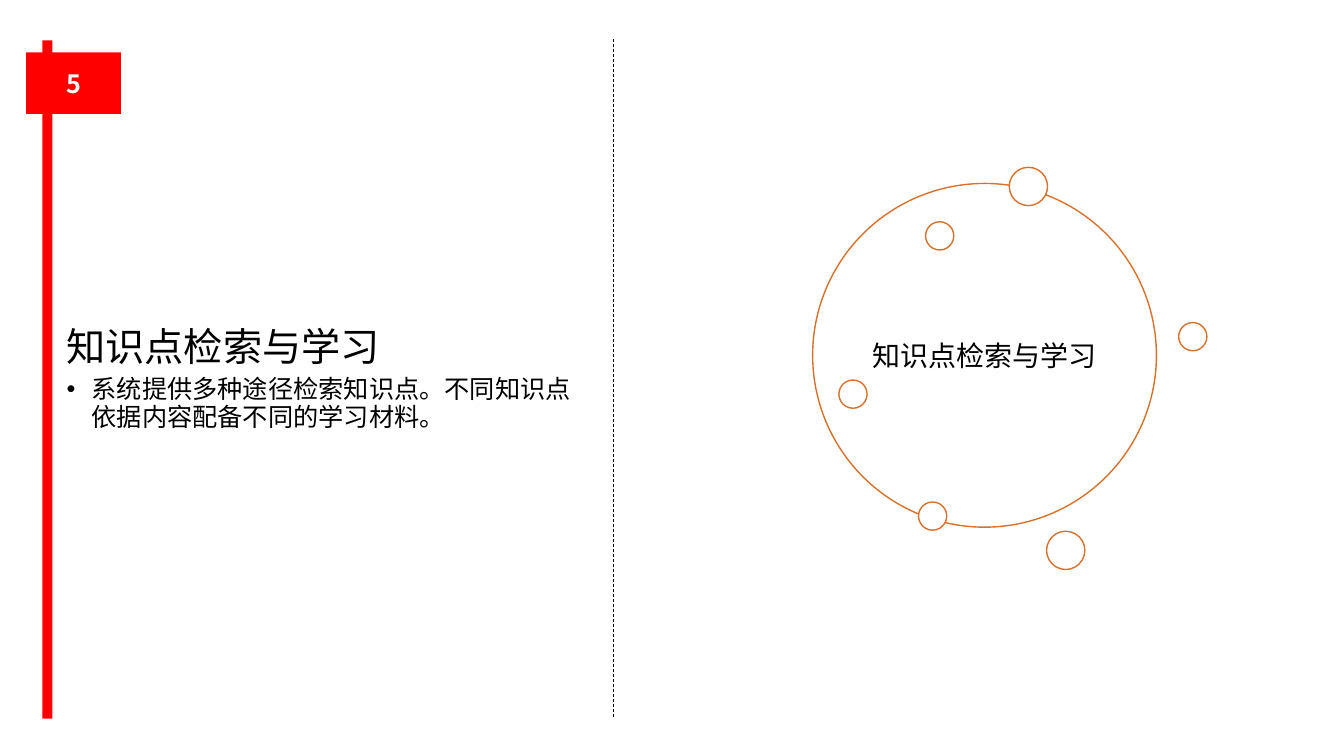
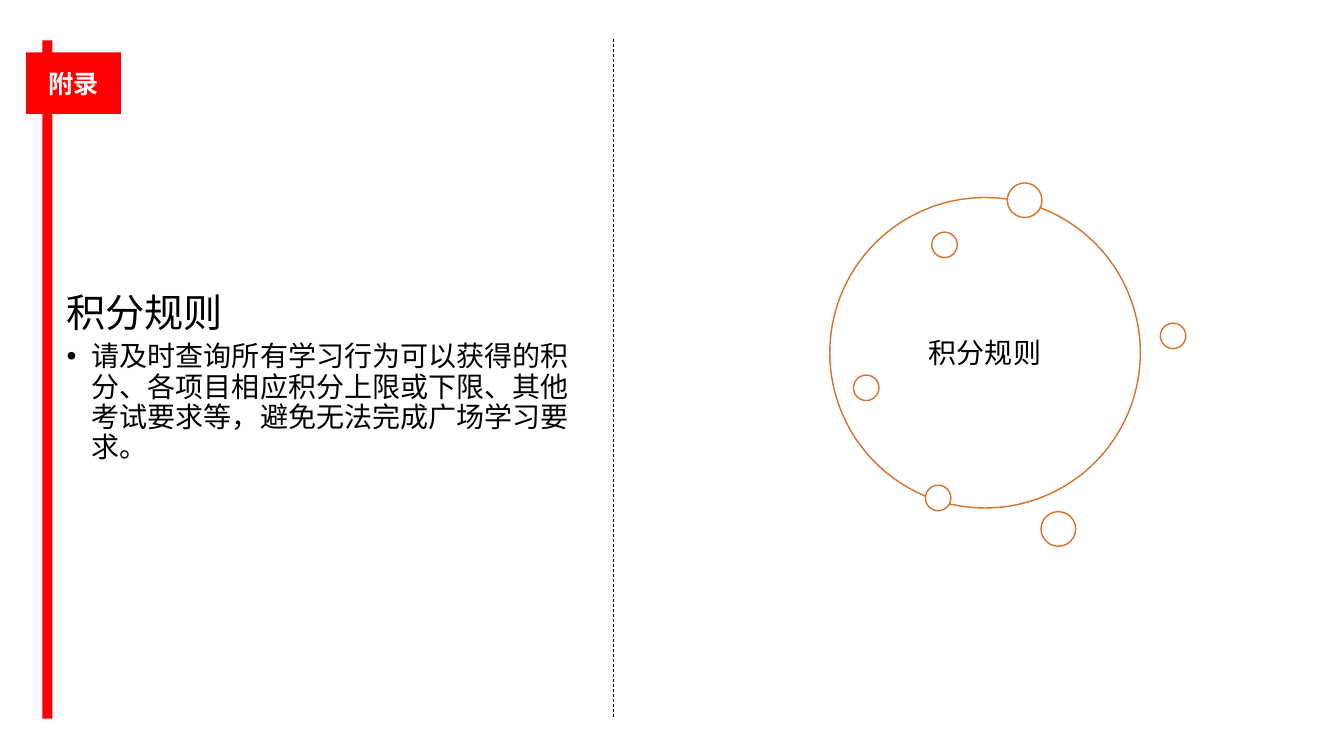
from lxml import etree
from pptx import Presentation
from pptx import util as u
from pptx.dml.color import RGBColor
from pptx.enum import dml, shapes, text
from pptx.oxml import ns

RED = RGBColor(0xFF, 0x00, 0x00)
ORANGE = RGBColor(0xD7, 0x71, 0x2C)
BLACK = RGBColor(0x00, 0x00, 0x00)
WHITE = RGBColor(0xFF, 0xFF, 0xFF)
FONT = "Noto Sans CJK SC"

COLUMN_LEFT, COLUMN_WIDTH = 0.56, 5.3
COLUMN_TOP, COLUMN_BOTTOM = 0.4, 7.13
HEADING_GAP = 0.07

# Left, top and diameter of each bubble, measured from a ring this wide
RING_SIZE = 3.41
BUBBLES = [
    (1.95, -0.16, 0.38),
    (1.05, 3.16, 0.28),
    (3.63, 1.38, 0.28),
    (2.32, 3.45, 0.38),
    (1.12, 0.38, 0.28),
    (0.26, 1.95, 0.28),
]


class SectionDeck:
    def __init__(self):
        self.deck = Presentation()
        self.deck.slide_width = u.Inches(13.33)
        self.deck.slide_height = u.Inches(7.5)
        self.page = None

    def add_page(self):
        self.page = self.deck.slides.add_slide(self.deck.slide_layouts[1])
        self.add_shape(self.page.shapes, "RECTANGLE", 0.42, 0.4, 0.1, 6.73, RED)
        self.add_divider()

    def add_divider(self):
        x = u.Inches(6.08)
        divider = self.page.shapes.add_connector(
            shapes.MSO_CONNECTOR.STRAIGHT, x, u.Inches(0.39), x, u.Inches(7.12))
        divider.line.color.rgb = BLACK
        divider.line.width = u.Pt(0.5)
        divider.line.dash_style = dml.MSO_LINE.DASH
        etree.SubElement(divider.element.spPr, ns.qn("a:effectLst"))

    def add_shape(self, parent, kind, left, top, width, height, fill, line=None):
        shape = parent.add_shape(
            shapes.MSO_SHAPE[kind],
            u.Inches(left), u.Inches(top), u.Inches(width), u.Inches(height))
        shape.shadow.inherit = False
        shape.fill.solid()
        shape.fill.fore_color.rgb = fill
        if line is None:
            shape.line.fill.background()
        else:
            shape.line.color.rgb = line
            shape.line.width = u.Pt(1)
        return shape

    def set_text(self, shape, words, size, color=BLACK, bold=False,
                 align=text.PP_ALIGN.CENTER, anchor=text.MSO_ANCHOR.MIDDLE):
        frame = shape.text_frame
        frame.text = words
        frame.auto_size = text.MSO_AUTO_SIZE.NONE
        frame.vertical_anchor = anchor
        para = frame.paragraphs[0]
        para.alignment = align
        for span in para.runs:
            span.font.name = FONT
            span.font.size = u.Pt(size)
            span.font.bold = bold
            span.font.color.rgb = color
            properties = span._r.get_or_add_rPr()
            etree.SubElement(properties, ns.qn("a:ea")).set("typeface", FONT)
        return para

    def add_badge(self, label):
        badge = self.add_shape(
            self.page.shapes, "RECTANGLE", 0.26, 0.52, 0.94, 0.61, RED)
        self.set_text(badge, label, 18, WHITE, bold=True)

    def fill_column(self, box, top, bottom, words, size, anchor):
        """Fit a placeholder to part of the left column and set its text."""
        box.left, box.width = u.Inches(COLUMN_LEFT), u.Inches(COLUMN_WIDTH)
        box.top, box.height = u.Inches(top), u.Inches(bottom - top)
        box.text_frame.margin_top = box.text_frame.margin_bottom = 0
        para = self.set_text(box, words, size,
                             align=text.PP_ALIGN.LEFT, anchor=anchor)
        para.line_spacing = 0.9
        para.space_before = u.Pt(0)
        return para

    def add_heading(self, words, bottom):
        self.fill_column(self.page.shapes.title, COLUMN_TOP, bottom, words, 28,
                         text.MSO_ANCHOR.BOTTOM)

    def add_bullet(self, words, size, top):
        para = self.fill_column(self.page.placeholders[1], top, COLUMN_BOTTOM,
                                words, size, text.MSO_ANCHOR.TOP)
        properties = para._p.get_or_add_pPr()
        properties.set("marL", str(u.Inches(0.25)))
        properties.set("indent", str(-u.Inches(0.25)))
        etree.SubElement(properties, ns.qn("a:buFont")).set("typeface", "Arial")
        etree.SubElement(properties, ns.qn("a:buChar")).set("char", "•")

    def add_ring(self, words, left, top, size):
        """Draw the labelled ring and scale its bubbles to match."""
        group = self.page.shapes.add_group_shape().shapes
        ring = self.add_shape(group, "OVAL", left, top, size, size, WHITE, ORANGE)
        self.set_text(ring, words, 20)
        ring.text_frame.word_wrap = False
        scale = size / RING_SIZE
        for x, y, diameter in BUBBLES:
            self.add_shape(group, "OVAL", left + x * scale, top + y * scale,
                           diameter * scale, diameter * scale, WHITE, ORANGE)

    def add_section(self, label, heading, bullet, bullet_size,
                    heading_bottom, ring):
        self.add_page()
        self.add_heading(heading, heading_bottom)
        self.add_bullet(bullet, bullet_size, heading_bottom + HEADING_GAP)
        self.add_badge(label)
        self.add_ring(heading, *ring)


def main():
    sections = SectionDeck()
    sections.add_section(
        "5", "知识点检索与学习",
        "系统提供多种途径检索知识点。不同知识点依据内容配备不同的学习材料。",
        18, heading_bottom=3.67, ring=(8.06, 1.82, 3.41))
    sections.add_section(
        "附录", "积分规则",
        "请及时查询所有学习行为可以获得的积分、各项目相应积分上限或下限、"
        "其他考试要求等，避免无法完成广场学习要求。",
        20, heading_bottom=3.33, ring=(8.23, 1.96, 3.08))
    sections.deck.save("out.pptx")


if __name__ == "__main__":
    main()
